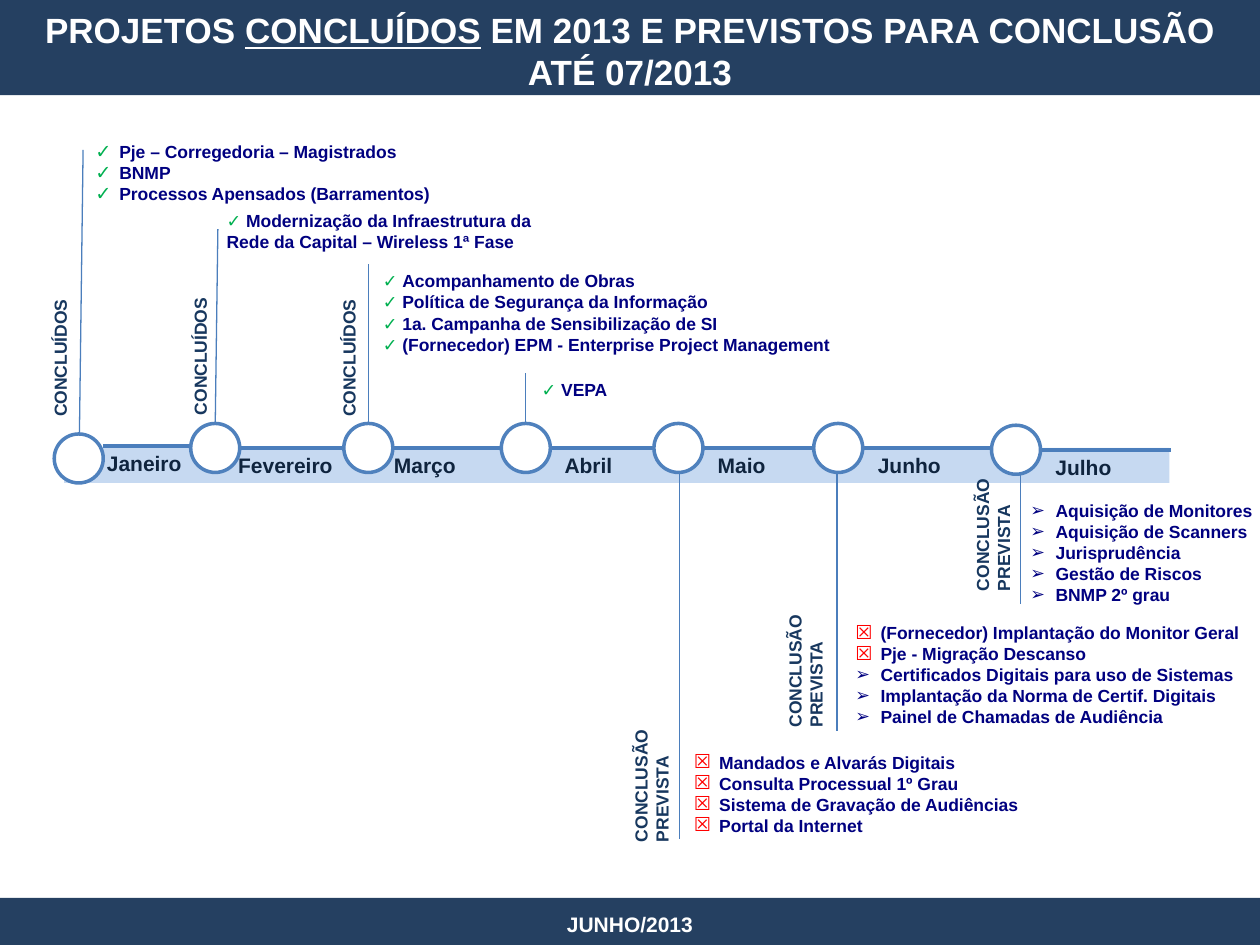
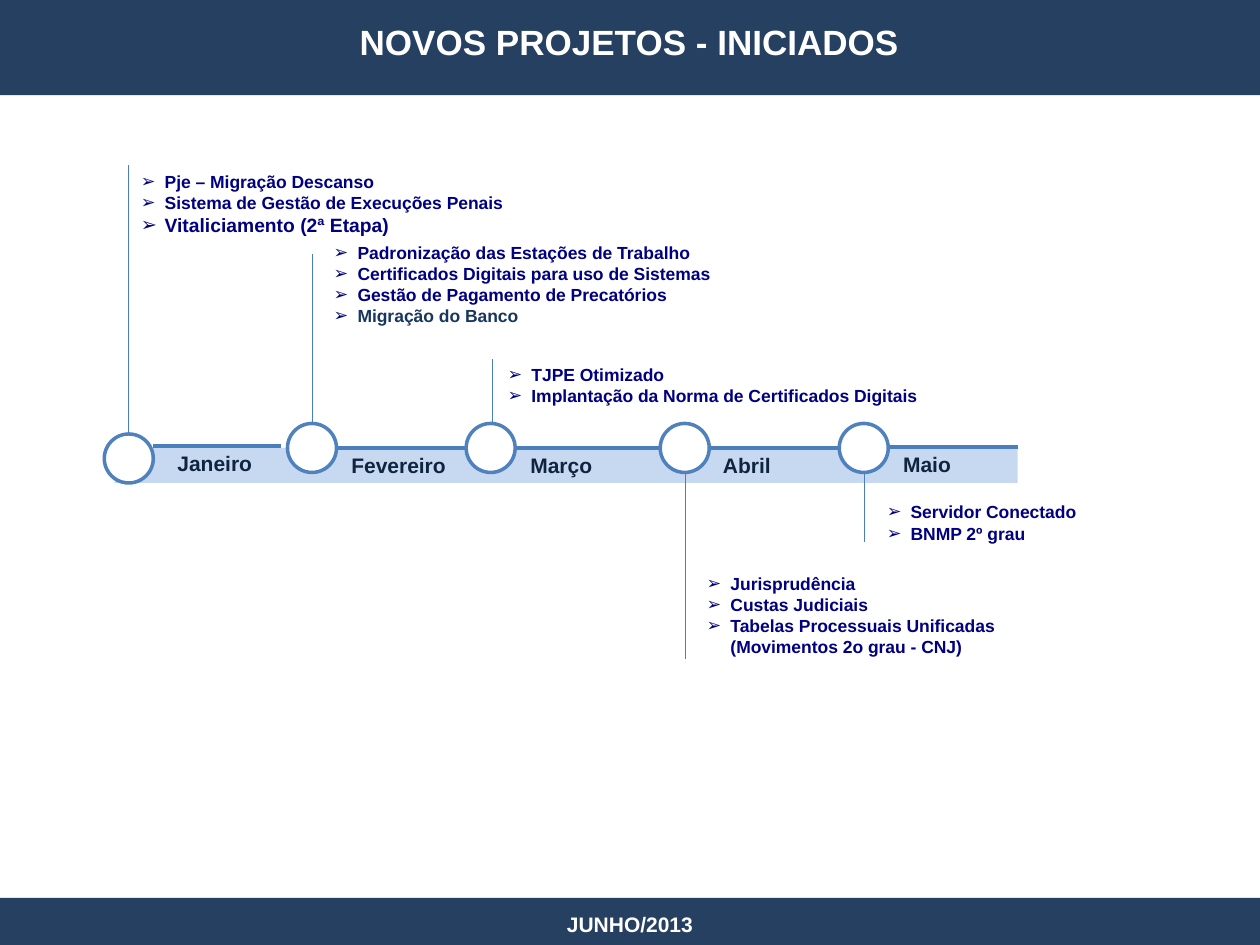
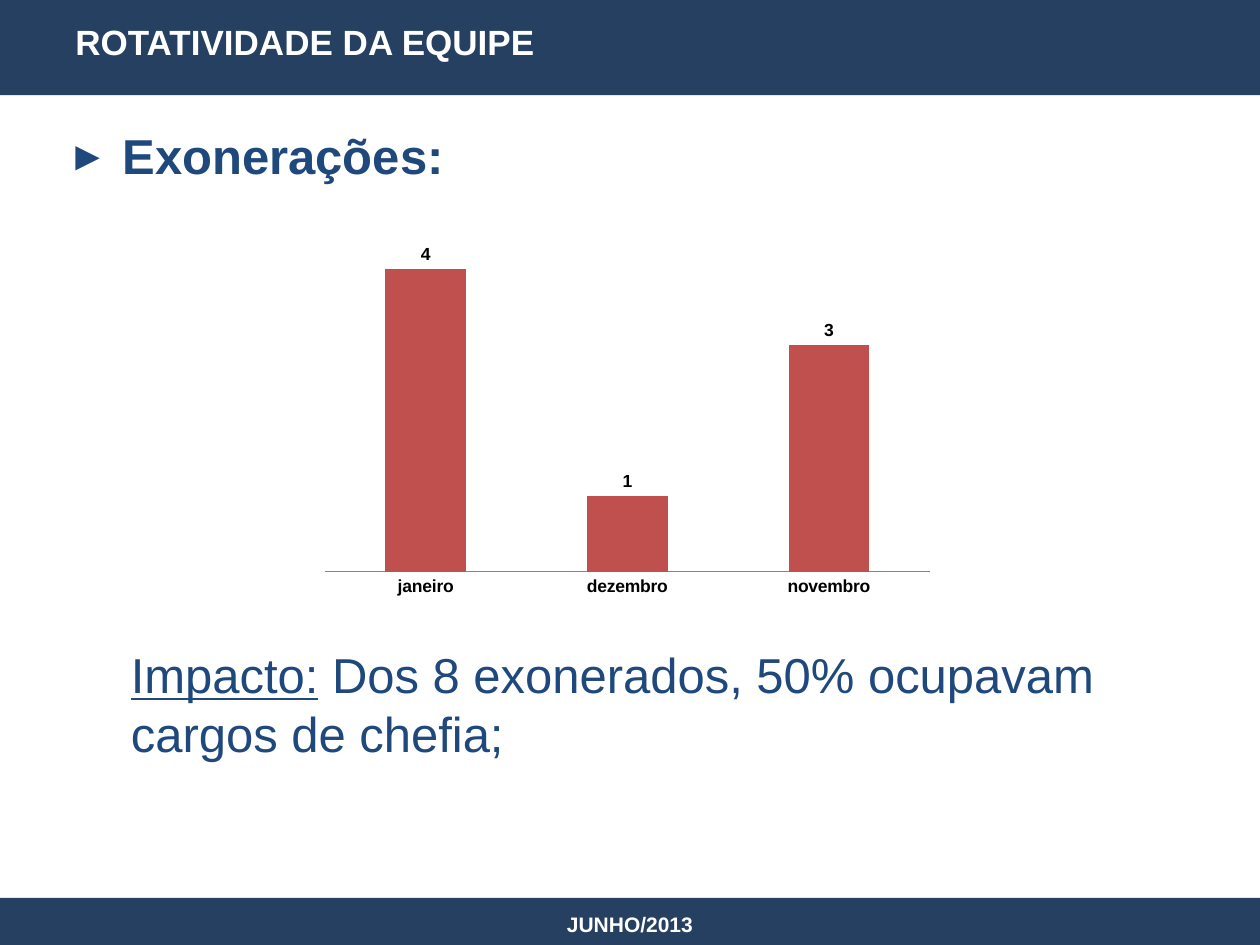
from lxml.etree import SubElement
from pptx import Presentation
from pptx.chart.data import CategoryChartData
from pptx.dml.color import RGBColor
from pptx.enum.chart import XL_CHART_TYPE, XL_LABEL_POSITION, XL_TICK_MARK
from pptx.enum.shapes import MSO_CONNECTOR, MSO_SHAPE
from pptx.enum.text import MSO_ANCHOR, PP_ALIGN
from pptx.oxml import parse_xml
from pptx.oxml.ns import nsdecls, qn
from pptx.util import Pt

# Shared look
FONT = "Arial"
NAVY, WHITE, BAND = "254061", "FFFFFF", "C6D9F1"
LINE, RING, INK = "4B7EBC", "4F81BD", "000080"
DARK, SIDE, BODY = "0F243E", "17375E", "1F497D"
MARKS = {"✓": "00B050", "☒": "FF0000", "➢": INK, "▸": BODY}
DOT = 28
MID, TOP = MSO_ANCHOR.MIDDLE, MSO_ANCHOR.TOP
LEFT, CENTER = PP_ALIGN.LEFT, PP_ALIGN.CENTER
SHADOW = (
    f'<a:effectLst {nsdecls("a")}><a:outerShdw blurRad="38100" dist="38100" '
    'dir="2700000"><a:srgbClr val="000000"><a:alpha val="43000"/></a:srgbClr>'
    '</a:outerShdw></a:effectLst>'
)


def rgb(code):
    return RGBColor.from_string(code)


def write(slide, rect, lines, size, hue, bold=True, align=LEFT, anchor=TOP,
          hang=0, glow=False):
    """Add text; a leading mark is a bullet if hang is set, parts between _ are underlined."""
    box = slide.shapes.add_textbox(*map(Pt, rect))
    frame = box.text_frame
    frame.word_wrap = True
    frame.vertical_anchor = anchor
    for num, line in enumerate(lines):
        para = frame.paragraphs[0] if num == 0 else frame.add_paragraph()
        mark = line[0] if line[0] in MARKS else ""
        if mark and hang:
            line = line[2:]
            props = para._p.get_or_add_pPr()
            props.set("marL", str(Pt(hang)))
            props.set("indent", str(-Pt(hang)))
            tint = SubElement(props, qn("a:buClr"))
            SubElement(tint, qn("a:srgbClr"), val=MARKS[mark])
            scale = "110000" if mark in "✓☒" else "100000"
            SubElement(props, qn("a:buSzPct"), val=scale)
            SubElement(props, qn("a:buFont"), typeface=FONT)
            SubElement(props, qn("a:buChar"), char=mark)
        elif mark:
            run = para.add_run()
            run.text, line = line[:2], line[2:]
            run.font.color.rgb = rgb(MARKS[mark])
        para.alignment = align
        for part, text in enumerate(line.split("_")):
            if text:
                run = para.add_run()
                run.text = text
                run.font.color.rgb = rgb(hue)
                run.font.underline = part % 2 == 1
        for run in para.runs:
            run.font.name, run.font.size, run.font.bold = FONT, Pt(size), bold
            if glow:
                run.font.fill._xPr.find(qn("a:solidFill")).addnext(parse_xml(SHADOW))
    return box


deck = Presentation()
deck.slide_width, deck.slide_height = Pt(720), Pt(540)

# Bands, title and footer on every slide
titles = [
    ((0, 3.6, 720, 51), CENTER,
     "PROJETOS _CONCLUÍDOS_ EM 2013 E PREVISTOS PARA CONCLUSÃO ATÉ 07/2013"),
    ((36, 3.6, 647, 40), CENTER, "NOVOS PROJETOS - INICIADOS"),
    ((36, 3.6, 545, 40), LEFT, "ROTATIVIDADE DA EQUIPE"),
]
for rect, align, text in titles:
    slide = deck.slides.add_slide(deck.slide_layouts[6])
    for top, high in ((513, 27), (-0.5, 55)):
        bar = slide.shapes.add_shape(MSO_SHAPE.RECTANGLE, 0, Pt(top), Pt(720), Pt(high))
        bar.shadow.inherit = False
        bar.fill.solid()
        bar.fill.fore_color.rgb = rgb(NAVY)
        bar.line.fill.background()
    write(slide, (0, 514, 720, 28), ["JUNHO/2013"], 12, WHITE,
          align=CENTER, anchor=MID, glow=True)
    write(slide, rect, [text], 20, WHITE, align=align, anchor=MID, glow=True)

# Months: name, dot x and y, axis end and y, label x, stem foot x, tip x, tip y
done = [
    ("Janeiro", 31, 248, 109, 255, 54, 45.4, 47.5, 85.7),
    ("Fevereiro", 109, 242, 196.5, 256, 129, 123, 124.5, 131),
    ("Março", 196.5, 242, 286.5, 256, 218, 210.5, 210.5, 151),
    ("Abril", 286.5, 242, 373.7, 256, 315.5, 300.3, 300.3, 213),
    ("Maio", 373.7, 242, 465, 256, 403, 388.3, 388.3, 479.5),
    ("Junho", 465, 242, 567, 256, 494.5, 478.3, 478.3, 417.5),
    ("Julho", 566.6, 243, 669, 257, 596, 583.2, 583.2, 345),
]
begun = [
    ("Janeiro", 59.6, 248, 160.6, 255, 94.3, 73.6, 73.6, 94.3),
    ("Fevereiro", 164.3, 242, 266.4, 256, 193.7, 178.5, 178.5, 145.4),
    ("Março", 266.4, 242, 377.3, 256, 296, 281.5, 281.5, 205),
    ("Abril", 377.3, 242, 479, 256, 406, 391.6, 391.6, 376.5),
    ("Maio", 479.6, 242, 581.7, 255.5, 509, 494, 494, 309.6),
]

# Project lists: box, hanging indent, items
ready = [
    ((47.5, 77, 244, 40), 13.6, [
        "✓ Pje – Corregedoria – Magistrados", "✓ BNMP",
        "✓ Processos Apensados (Barramentos)"]),
    ((122.4, 116.6, 203, 36), 0, [
        "✓ Modernização da Infraestrutura da Rede da Capital – Wireless 1ª Fase"]),
    ((211.7, 151, 276.5, 63), 0, [
        "✓ Acompanhamento de Obras", "✓ Política de Segurança da Informação",
        "✓ 1a. Campanha de Sensibilização de SI",
        "✓ (Fornecedor) EPM - Enterprise Project Management"]),
    ((302.4, 213, 62, 25), 0, ["✓ VEPA"]),
    ((389.5, 426, 236, 78), 14.4, [
        "☒ Mandados e Alvarás Digitais", "☒ Consulta Processual 1º Grau",
        "☒ Sistema de Gravação de Audiências", "☒ Portal da Internet"]),
    ((481.7, 352, 243, 70), 14.4, [
        "☒ (Fornecedor) Implantação do Monitor Geral", "☒ Pje - Migração Descanso",
        "➢ Certificados Digitais para uso de Sistemas",
        "➢ Implantação da Norma de Certif. Digitais",
        "➢ Painel de Chamadas de Audiência"]),
    ((581.7, 282, 243, 70), 14.4, [
        "➢ Aquisição de Monitores", "➢ Aquisição de Scanners",
        "➢ Jurisprudência", "➢ Gestão de Riscos", "➢ BNMP 2º grau"]),
]
fresh = [
    ((73.4, 94.3, 243, 42), 13.6, [
        "➢ Pje – Migração Descanso", "➢ Sistema de Gestão de Execuções Penais",
        "➢ Vitaliciamento (2ª Etapa)"]),
    ((183.6, 134.6, 287, 50), 13.6, [
        "➢ Padronização das Estações de Trabalho",
        "➢ Certificados Digitais para uso de Sistemas",
        "➢ Gestão de Pagamento de Precatórios", "➢ Migração do Banco"]),
    ((283, 204.5, 255, 31), 13.6, [
        "➢ TJPE Otimizado", "➢ Implantação da Norma de Certificados Digitais"]),
    ((396.7, 324, 190, 53), 13.6, [
        "➢ Jurisprudência", "➢ Custas Judiciais",
        "➢ Tabelas Processuais Unificadas (Movimentos 2o grau - CNJ)"]),
    ((499.7, 283, 164, 27), 13.6, ["➢ Servidor Conectado", "➢ BNMP 2º grau"]),
]

# Timelines on the first two slides
plans = [(done, ready, 36.7, 631.5), (begun, fresh, 65.5, 516)]
for slide, (months, lists, start, wide) in zip(deck.slides, plans):
    shapes = slide.shapes
    band = shapes.add_shape(MSO_SHAPE.RECTANGLE, Pt(start), Pt(256), Pt(wide), Pt(20))
    band.shadow.inherit = False
    band.fill.solid()
    band.fill.fore_color.rgb = rgb(BAND)
    band.line.fill.background()
    for name, left, top, end, level, label, foot, tip, reach in months:
        edge = top if reach < top else top + DOT
        for ends, weight in (((left + DOT, level, end, level), 2.25),
                             ((foot, edge, tip, reach), 0.75)):
            line = shapes.add_connector(MSO_CONNECTOR.STRAIGHT, *map(Pt, ends))
            line.line.color.rgb = rgb(LINE)
            line.line.width = Pt(weight)
            SubElement(line._element.spPr, qn("a:effectLst"))
        dot = shapes.add_shape(MSO_SHAPE.OVAL, Pt(left), Pt(top), Pt(DOT), Pt(DOT))
        dot.shadow.inherit = False
        dot.fill.solid()
        dot.fill.fore_color.rgb = rgb(WHITE)
        dot.line.color.rgb = rgb(RING)
        dot.line.width = Pt(2)
        write(slide, (label, level, 73, 19.5), [name], 12, DARK, anchor=MID)
    for rect, hang, items in lists:
        write(slide, rect, items, 10, INK, hang=hang)

# Two items that stand out on the second slide
for shape in deck.slides[1].shapes:
    if shape.has_text_frame:
        for para in shape.text_frame.paragraphs:
            if para.text.startswith("Vitaliciamento"):
                para.runs[0].font.size = Pt(11)
            elif para.text == "Migração do Banco":
                para.runs[0].font.color.rgb = rgb(SIDE)

# Upright status labels
status = [
    ("CONCLUÍDOS", -10, 191, 89, 19.5),
    ("CONCLUÍDOS", 70, 190, 89, 19.5),
    ("CONCLUÍDOS", 155, 191, 89, 19.5),
    ("CONCLUSÃO PREVISTA", 328.3, 428.5, 88, 31.5),
    ("CONCLUSÃO PREVISTA", 419.8, 366.5, 81, 31.5),
    ("CONCLUSÃO PREVISTA", 525.6, 287.3, 83.5, 31.5),
]
for text, *rect in status:
    write(deck.slides[0], rect, [text], 10, SIDE).rotation = 270

# Staff turnover
slide = deck.slides[2]
write(slide, (36, 68, 657, 40), ["▸ Exonerações:"], 28, BODY, hang=27)
write(slide, (67.7, 365, 625, 75),
      ["_Impacto:_ Dos 8 exonerados, 50% ocupavam cargos de chefia;"],
      28, BODY, bold=False)

data = CategoryChartData()
data.categories = ["janeiro", "dezembro", "novembro"]
data.add_series("Series 1", (4, 1, 3))
chart = slide.shapes.add_chart(XL_CHART_TYPE.COLUMN_CLUSTERED, Pt(178.5), Pt(128),
                               Pt(360), Pt(216), data).chart
chart.has_legend = chart.has_title = False
chart.font.name, chart.font.size, chart.font.bold = FONT, Pt(10), True
chart.font.color.rgb = rgb("000000")
plot = chart.plots[0]
plot.gap_width = 150
plot.vary_by_categories = False
fill = plot.series[0].format.fill
fill.solid()
fill.fore_color.rgb = rgb("C0504D")
plot.has_data_labels = True
plot.data_labels.show_value = True
plot.data_labels.position = XL_LABEL_POSITION.OUTSIDE_END
axis = chart.value_axis
axis.minimum_scale, axis.maximum_scale = 0, 4.5
axis.has_major_gridlines = axis.visible = False
base = chart.category_axis
base.major_tick_mark = XL_TICK_MARK.NONE
base.format.line.color.rgb = rgb("868686")

# Fixed plot area inside the chart
area = chart._chartSpace.chart.plotArea
for old in area.findall(qn("c:layout")):
    area.remove(old)
area.insert(0, parse_xml(
    f'<c:layout {nsdecls("c")}><c:manualLayout><c:layoutTarget val="inner"/>'
    '<c:xMode val="edge"/><c:yMode val="edge"/><c:x val="0.02"/><c:y val="0.02"/>'
    '<c:w val="0.96"/><c:h val="0.9"/></c:manualLayout></c:layout>'))

deck.save("out.pptx")
